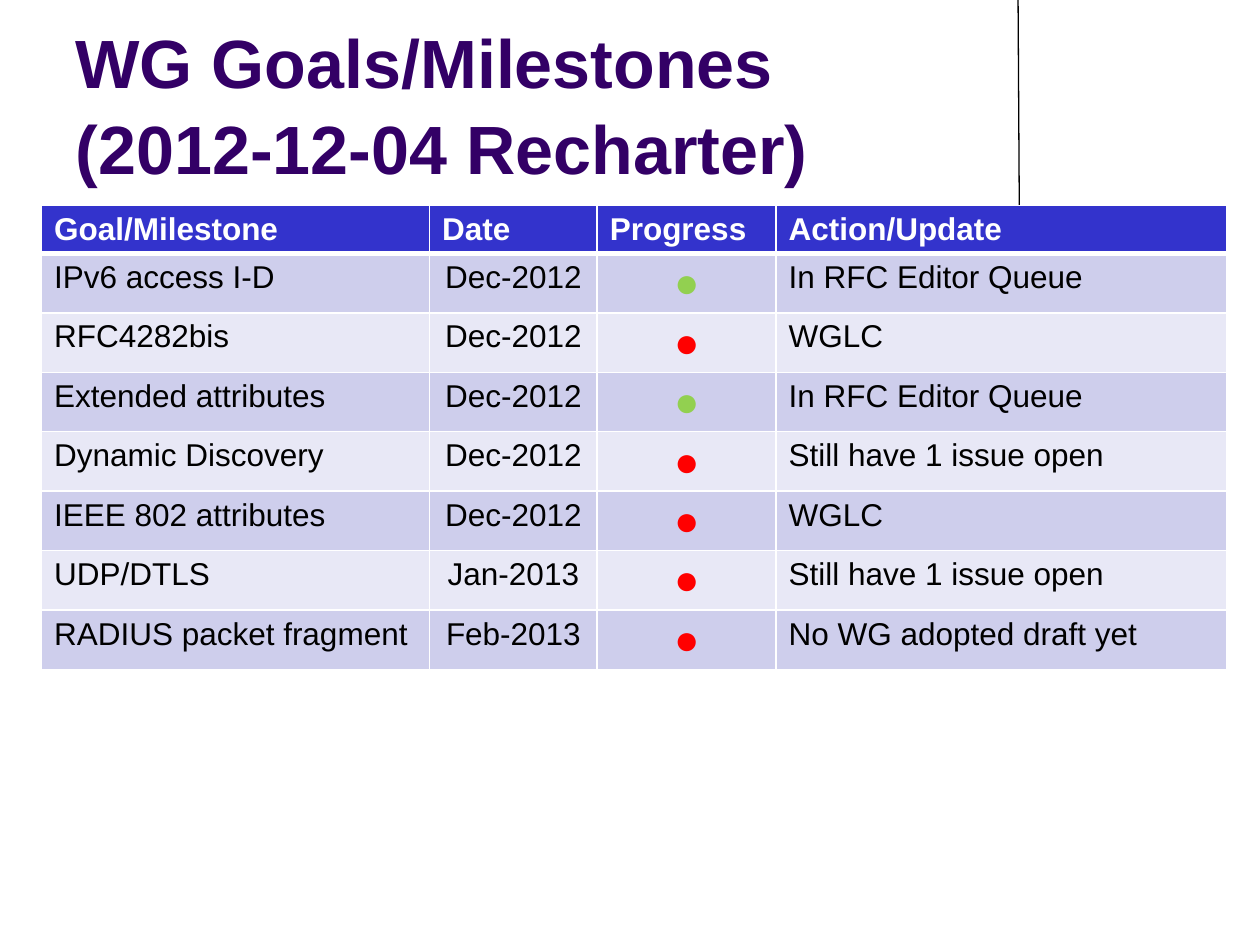
from dataclasses import dataclass

from lxml import etree
from pptx import Presentation
from pptx.dml.color import RGBColor
from pptx.enum.shapes import MSO_CONNECTOR
from pptx.enum.text import MSO_ANCHOR, MSO_AUTO_SIZE, PP_ALIGN
from pptx.oxml.ns import qn
from pptx.util import Inches, Pt

STRAIGHT = MSO_CONNECTOR.STRAIGHT
BOTTOM = MSO_ANCHOR.BOTTOM
NO_AUTOFIT = MSO_AUTO_SIZE.NONE
LEFT, CENTER = PP_ALIGN.LEFT, PP_ALIGN.CENTER


@dataclass(frozen=True)
class Theme:
    """Colours, font and type sizes of the slide."""
    font: str = "Arial"
    title: str = "330066"
    header: str = "3333CC"
    bands: tuple = ("CECEEC", "E8E8F6")
    text: str = "000000"
    white: str = "FFFFFF"
    done: str = "92D050"
    late: str = "FF0000"
    title_size: float = 39
    body_size: float = 18
    dot_size: float = 24


THEME = Theme()
TITLE = "WG Goals/Milestones \v(2012-12-04 Recharter)"
HEADERS = ("Goal/Milestone", "Date", "Progress", "Action/Update")
MILESTONES = (
    ("IPv6 access I-D", "Dec-2012", THEME.done, "In RFC Editor Queue"),
    ("RFC4282bis", "Dec-2012", THEME.late, "WGLC"),
    ("Extended attributes", "Dec-2012", THEME.done, "In RFC Editor Queue"),
    ("Dynamic Discovery", "Dec-2012", THEME.late, "Still have 1 issue open"),
    ("IEEE 802 attributes", "Dec-2012", THEME.late, "WGLC"),
    ("UDP/DTLS", "Jan-2013", THEME.late, "Still have 1 issue open"),
    ("RADIUS packet fragment", "Feb-2013", THEME.late, "No WG adopted draft yet"),
)
COLUMN_WIDTHS = (3.08, 1.33, 1.42, 3.58)
HEADER_HEIGHT, ROW_HEIGHT = 0.37, 0.47


def write_text(frame, text, size=THEME.body_size, color=THEME.text, bold=False,
               align=LEFT, spacing=None):
    """Put formatted text in the first paragraph of a text frame."""
    paragraph = frame.paragraphs[0]
    paragraph.text = text
    paragraph.alignment = align
    paragraph.line_spacing = spacing
    for run in paragraph.runs:
        run.font.name = THEME.font
        run.font.size = Pt(size)
        run.font.bold = bold
        run.font.color.rgb = RGBColor.from_string(color)


def add_title(slide):
    """Place and fill the title placeholder."""
    title = slide.shapes.title
    title.left, title.top = Inches(0.5), Inches(0.13)
    title.width, title.height = Inches(7.5), Inches(1.41)
    frame = title.text_frame
    frame.word_wrap = True
    frame.auto_size = NO_AUTOFIT
    frame.vertical_anchor = BOTTOM
    write_text(frame, TITLE, size=THEME.title_size, color=THEME.title, bold=True,
               spacing=1.05)


def add_rule(slide):
    """Draw the thin vertical rule beside the title."""
    rule = slide.shapes.add_connector(
        STRAIGHT, Inches(8.08), Inches(0), Inches(8.09), Inches(1.67))
    rule.line.color.rgb = RGBColor.from_string(THEME.text)
    rule.line.width = Pt(0.75)
    etree.SubElement(rule.element.spPr, qn("a:effectLst"))


def style_cell(cell, fill, top=1, bottom=1):
    """Give a cell white borders, in points, and a solid fill."""
    properties = cell._tc.get_or_add_tcPr()
    for tag, width in (("lnL", 1), ("lnR", 1), ("lnT", top), ("lnB", bottom)):
        border = etree.SubElement(properties, qn(f"a:{tag}"), w=str(Pt(width)))
        solid = etree.SubElement(border, qn("a:solidFill"))
        etree.SubElement(solid, qn("a:srgbClr"), val=THEME.white)
    cell.fill.solid()
    cell.fill.fore_color.rgb = RGBColor.from_string(fill)


def fill_header(table):
    """Write the header row."""
    for column, label in enumerate(HEADERS):
        cell = table.cell(0, column)
        style_cell(cell, THEME.header, bottom=3)
        write_text(cell.text_frame, label, color=THEME.white, bold=True)


def fill_milestone(table, row, milestone):
    """Write one milestone row with its coloured progress dot."""
    goal, date, progress, action = milestone
    contents = (
        (goal, {}),
        (date, {"align": CENTER}),
        ("●", {"align": CENTER, "size": THEME.dot_size, "color": progress}),
        (action, {}),
    )
    for column, (text, text_format) in enumerate(contents):
        cell = table.cell(row, column)
        style_cell(cell, THEME.bands[(row - 1) % 2], top=3 if row == 1 else 1)
        write_text(cell.text_frame, text, **text_format)


def add_milestone_table(slide):
    """Build the table of goals and milestones."""
    height = HEADER_HEIGHT + ROW_HEIGHT * len(MILESTONES)
    table = slide.shapes.add_table(
        len(MILESTONES) + 1, len(HEADERS), Inches(0.33), Inches(1.63),
        Inches(sum(COLUMN_WIDTHS)), Inches(height)).table
    for column, width in zip(table.columns, COLUMN_WIDTHS):
        column.width = Inches(width)
    for row in table.rows:
        row.height = Inches(ROW_HEIGHT)
    table.rows[0].height = Inches(HEADER_HEIGHT)
    fill_header(table)
    for row, milestone in enumerate(MILESTONES, start=1):
        fill_milestone(table, row, milestone)


def main():
    """Build and save the presentation."""
    presentation = Presentation()
    presentation.slide_width, presentation.slide_height = Inches(10), Inches(7.5)
    slide = presentation.slides.add_slide(presentation.slide_layouts[5])
    add_rule(slide)
    add_title(slide)
    add_milestone_table(slide)
    presentation.save("out.pptx")


if __name__ == "__main__":
    main()
